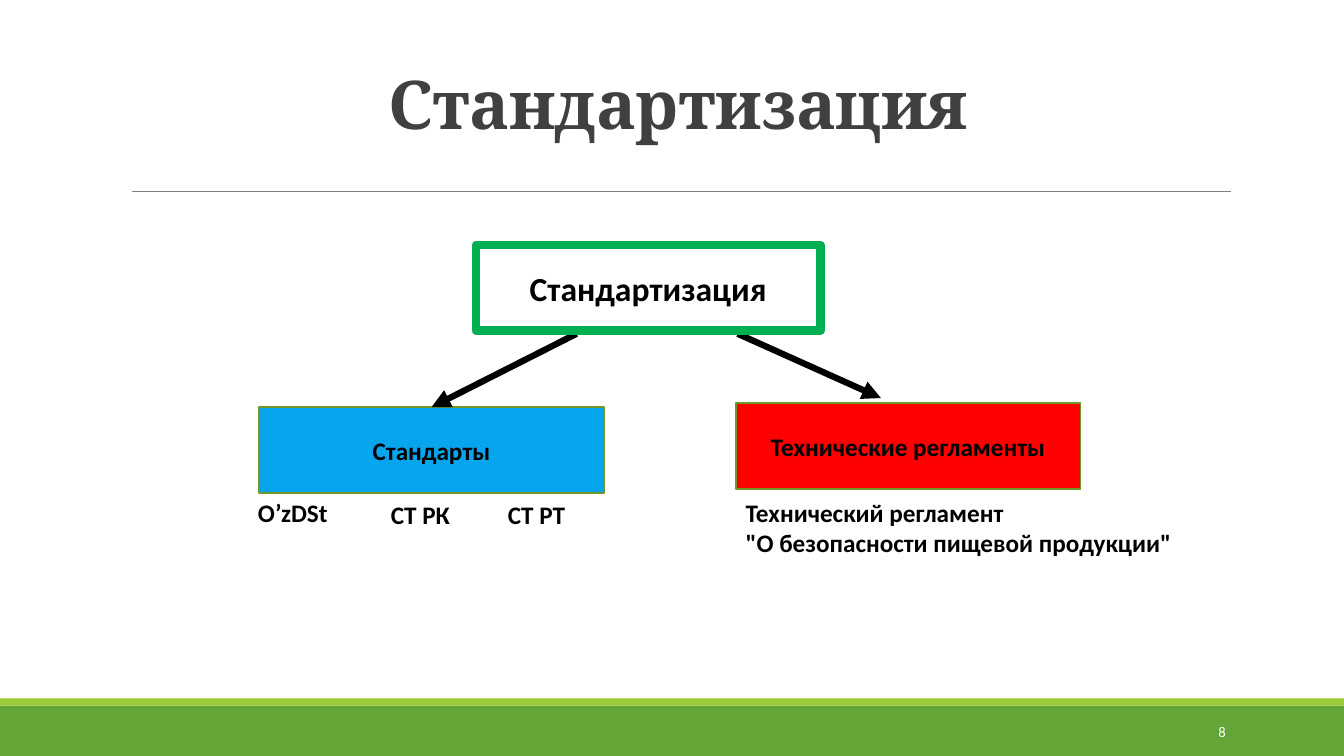
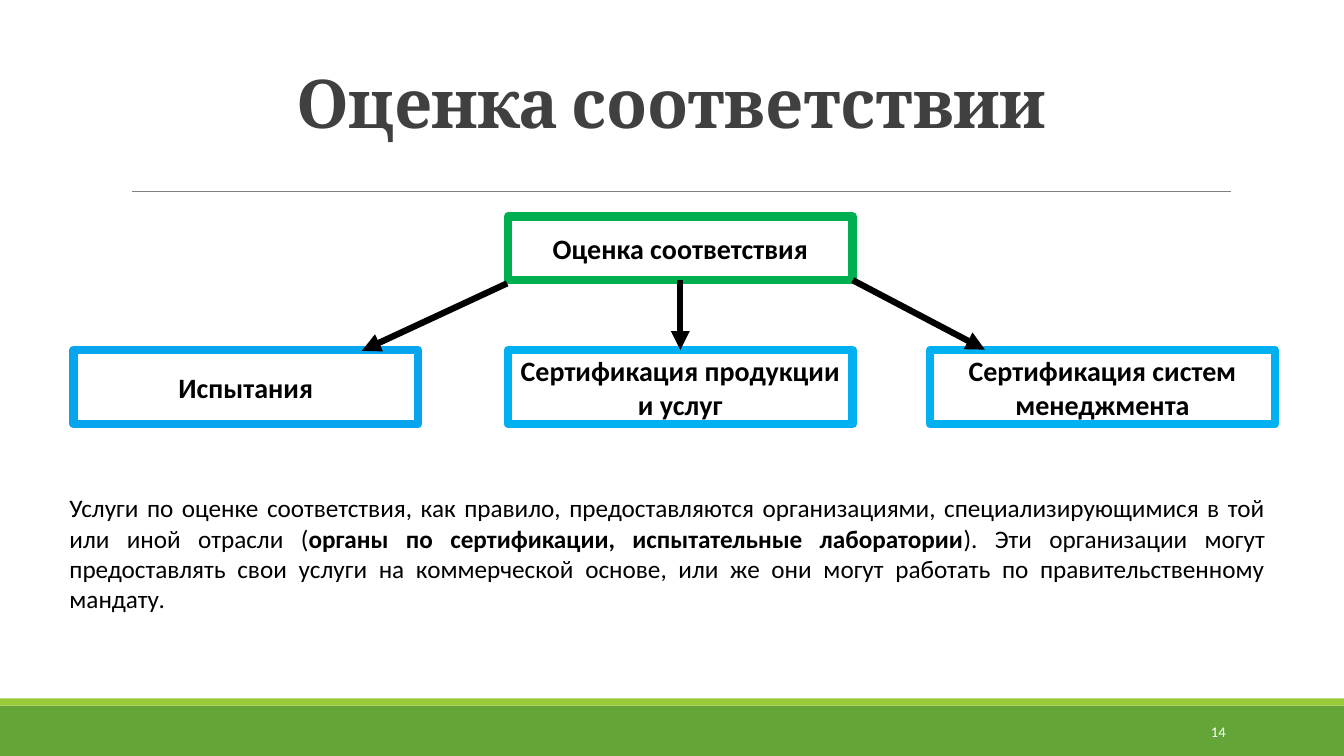
from pptx import Presentation
from pptx import util as u
from pptx.dml import color
from pptx.enum import shapes, text
from pptx.oxml import ns, xmlchemy as xml

WIDE, HIGH = 33.87, 19.05
BOX_W = 8.69
GREEN, LIME, GRAY = "63A537", "99CB38", "808080"
INK, DARK, WHITE = "000000", "404040", "FFFFFF"
LEAF, BLUE, SKY, RED, OLIVE = "00B050", "08A5EF", "00B0F0", "FF0000", "719629"
ALIGN = text.PP_ALIGN
ANCHOR = text.MSO_ANCHOR
FIT = text.MSO_AUTO_SIZE


def cm(*nums):
    return [u.Cm(n) for n in nums]


def paint(part, tone):
    if hasattr(part, "solid"):
        part.solid()
        part = part.fore_color
    part.rgb = color.RGBColor.from_string(tone)


def write(frame, words, size=18, font="Calibri", tone=INK, bold=False,
          align=ALIGN.LEFT, anchor=ANCHOR.TOP, wrap=True, fit=FIT.NONE,
          lead=None, track=None):
    frame.word_wrap = wrap
    frame.auto_size = fit
    frame.vertical_anchor = anchor
    for row, line in enumerate(words.split("\n")):
        para = frame.add_paragraph() if row else frame.paragraphs[0]
        para.alignment = align
        if lead:
            para.line_spacing = lead
        for turn, piece in enumerate(line.split("*")):
            run = para.add_run()
            run.text = piece
            run.font.name = font
            run.font.size = u.Pt(size)
            run.font.bold = bold or turn % 2 == 1
            paint(run.font.color, tone)
            if track:
                run.font._element.set("spc", str(track))


def label(slide, at, words, **style):
    area = slide.shapes.add_textbox(*cm(*at))
    write(area.text_frame, words, **style)


def block(slide, at, fill, edge=None, width=6, words="", size=18):
    rect = slide.shapes.add_shape(shapes.MSO_SHAPE.RECTANGLE, *cm(*at))
    rect.shadow.inherit = False
    paint(rect.fill, fill)
    if edge:
        paint(rect.line.fill, edge)
        rect.line.width = u.Pt(width)
    else:
        rect.line.fill.background()
    if words:
        write(rect.text_frame, words, size=size, bold=True,
              align=ALIGN.CENTER, anchor=ANCHOR.MIDDLE)
    return rect


def rule(slide, ends, tone=INK, width=4.5, head=True, start=None, stop=None):
    line = slide.shapes.add_connector(shapes.MSO_CONNECTOR.STRAIGHT, *cm(*ends))
    paint(line.line.fill, tone)
    line.line.width = u.Pt(width)
    if start:
        line.begin_connect(start, 2)
    if stop:
        line.end_connect(stop, 0)
    props = line.element.find(ns.qn("p:spPr"))
    if head:
        tip = xml.OxmlElement("a:tailEnd")
        tip.set("type", "triangle")
        props.find(ns.qn("a:ln")).append(tip)
    props.append(xml.OxmlElement("a:effectLst"))


def base(deck, title, left, top, number):
    slide = deck.slides.add_slide(deck.slide_layouts[5])
    block(slide, (0, 17.78, WIDE, 1.27), GREEN)
    block(slide, (0, 17.6, WIDE, 0.18), LIME)
    rule(slide, (3.33, 4.83, 31.01, 4.83), GRAY, 0.5, head=False)
    head = slide.shapes.title
    head.left, head.top, head.width, head.height = cm(left, top, 27.94, 4.04)
    write(head.text_frame, title, size=48, font="Cambria", tone=DARK, bold=True,
          align=ALIGN.CENTER, anchor=ANCHOR.BOTTOM, lead=0.85, track=-50)
    label(slide, (27.51, 17.93, 3.63, 1.02), number, size=10.5, tone=WHITE,
          align=ALIGN.RIGHT, anchor=ANCHOR.MIDDLE)
    return slide


def norms(slide, x, y):
    left = block(slide, (x + 0.28, y + 4.09, BOX_W, 2.16), BLUE, OLIVE, 1.25,
                 "Стандарты")
    block(slide, (x + 12.29, y + 3.99, BOX_W, 2.16), RED, OLIVE, 1.25,
          "Технические регламенты")
    notes = [
        (12.29, 6.23, 11.33, 1.8,
         "Технический регламент\n\"О безопасности пищевой продукции\""),
        (0, 6.23, 2.29, 1.02, "O’zDSt"),
        (3.35, 6.3, 2.01, 1.02, "СТ РК"),
        (6.3, 6.3, 1.98, 1.02, "СТ РТ"),
    ]
    for dx, dy, wide, high, words in notes:
        label(slide, (x + dx, y + dy, wide, high), words, bold=True,
              wrap=False, fit=FIT.SHAPE_TO_FIT_TEXT)
    rule(slide, (x + 8.28, y + 2.24, x + 4.62, y + 4.09), stop=left)
    rule(slide, (x + 12.34, y + 2.24, x + 15.95, y + 3.86))
    block(slide, (x + 5.74, y, BOX_W, 2.16), WHITE, LEAF,
          words="Стандартизация", size=24)


def checks(slide, x, y):
    mid = 10.95
    top = block(slide, (x + mid, y, BOX_W, 1.6), WHITE, LEAF,
                words="Оценка соответствия", size=20)
    kinds = [
        (0, BLUE, "Испытания"),
        (mid, SKY, "Сертификация продукции и услуг"),
        (21.59, SKY, "Сертификация систем менеджмента"),
    ]
    boxes = [block(slide, (x + dx, y + 3.36, BOX_W, 1.87), WHITE, edge,
                   words=words, size=20) for dx, edge, words in kinds]
    rule(slide, (x + 10.93, y + 1.68, x + 7.27, y + 3.38))
    rule(slide, (x + 19.64, y + 1.6, x + 22.97, y + 3.35))
    rule(slide, (x + 15.3, y + 1.6, x + 15.3, y + 3.36),
         start=top, stop=boxes[1])


def main():
    deck = Presentation()
    deck.slide_width, deck.slide_height = cm(WIDE, HIGH)
    norms(base(deck, "Стандартизация", 3.12, -0.3, "8"), 6.25, 6.17)
    slide = base(deck, "Оценка соответствии", 2.95, -0.33, "14")
    checks(slide, 1.85, 5.46)
    label(slide, (1.5, 12.29, 30.63, 3.33),
          "Услуги по оценке соответствия, как правило, предоставляются "
          "организациями, специализирующимися в той или иной отрасли "
          "(*органы по сертификации, испытательные лаборатории*). "
          "Эти организации могут предоставлять свои услуги на коммерческой "
          "основе, или же они могут работать по правительственному мандату.",
          align=ALIGN.JUSTIFY, fit=FIT.SHAPE_TO_FIT_TEXT)
    deck.save("out.pptx")


if __name__ == "__main__":
    main()
